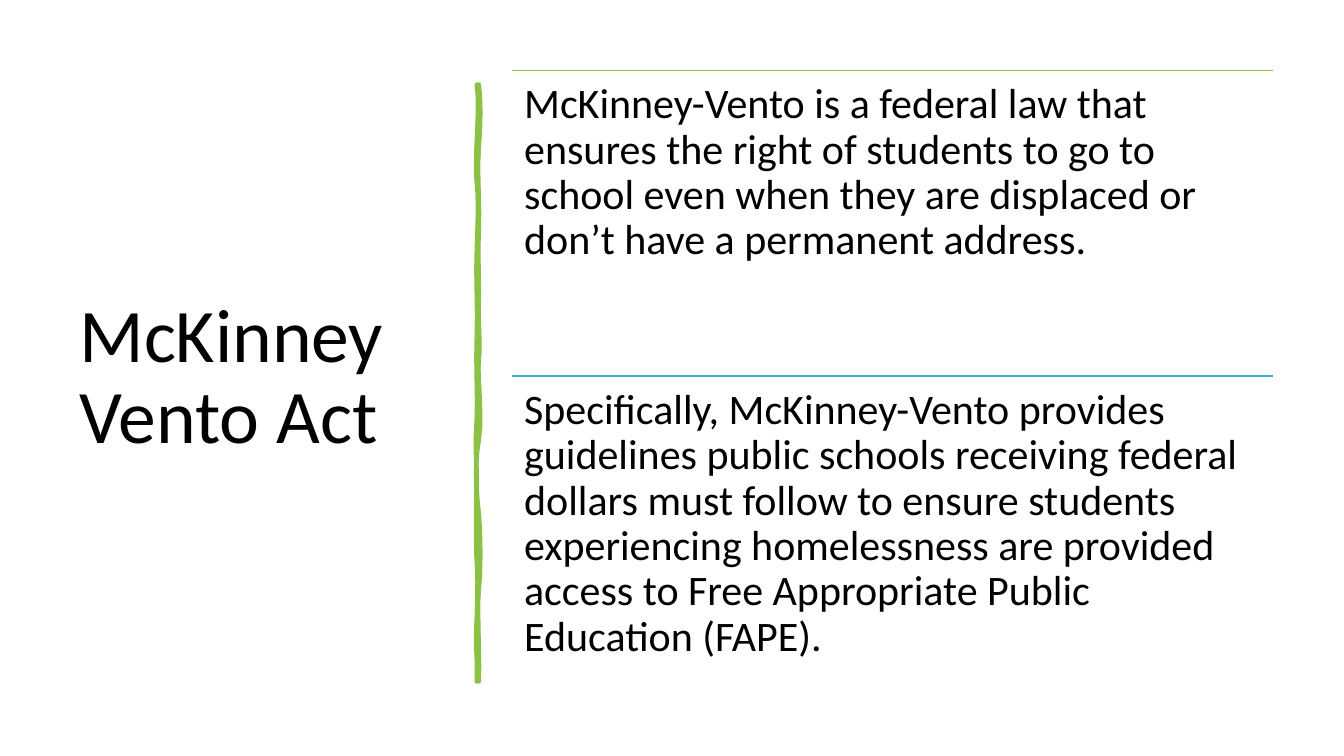
from dataclasses import dataclass

from lxml import etree
from pptx import Presentation
from pptx.dml.color import RGBColor
from pptx.enum.shapes import MSO_CONNECTOR
from pptx.enum.text import MSO_ANCHOR
from pptx.oxml.ns import qn
from pptx.slide import Slide
from pptx.util import Inches, Pt

STRAIGHT = MSO_CONNECTOR.STRAIGHT
TOP, MIDDLE = MSO_ANCHOR.TOP, MSO_ANCHOR.MIDDLE
WIDE, HIGH = Inches(13.333), Inches(7.5)
FONT, BLACK, GREEN, BLUE = "Calibri", "000000", "8BC145", "36AFCE"
LEFT, SPAN = 5.08 / 13.333, 7.55 / 13.333
FIRST, ROW = 0.7 / 7.5, 3.03 / 7.5
STEPS = 6

Point = tuple[float, float]

START: Point = (4.75, 0.84)
CURVES: list[tuple[Point, Point, Point]] = [
    ((4.77, 1.02), (4.77, 1.19), (4.75, 1.46)),
    ((4.73, 1.73), (4.76, 1.95), (4.75, 2.26)),
    ((4.74, 2.57), (4.75, 2.62), (4.75, 2.94)),
    ((4.74, 3.25), (4.77, 3.42), (4.75, 3.56)),
    ((4.73, 3.7), (4.79, 4.14), (4.75, 4.36)),
    ((4.71, 4.57), (4.72, 4.84), (4.75, 5.1)),
    ((4.77, 5.36), (4.77, 5.64), (4.75, 5.84)),
    ((4.73, 6.03), (4.76, 6.5), (4.75, 6.76)),
    ((4.74, 6.76), (4.73, 6.76), (4.73, 6.76)),
    ((4.74, 6.46), (4.71, 6.44), (4.73, 6.13)),
    ((4.74, 5.83), (4.74, 5.7), (4.73, 5.57)),
    ((4.72, 5.44), (4.72, 4.95), (4.73, 4.77)),
    ((4.73, 4.59), (4.71, 4.45), (4.73, 4.15)),
    ((4.74, 3.86), (4.72, 3.73), (4.73, 3.35)),
    ((4.74, 2.98), (4.72, 2.81), (4.73, 2.5)),
    ((4.74, 2.18), (4.75, 2), (4.73, 1.81)),
    ((4.7, 1.63), (4.77, 1.04), (4.73, 0.84)),
]


@dataclass
class Label:
    text: str
    left: float
    top: float
    width: float
    height: float
    size: int
    inset: Point
    anchor: MSO_ANCHOR


@dataclass
class Block:
    text: str
    tint: str


BLOCKS = [
    Block(
        "McKinney-Vento is a federal law that ensures the right of students "
        "to go to school even when they are displaced or don’t have a "
        "permanent address.",
        GREEN,
    ),
    Block(
        "Specifically, McKinney-Vento provides guidelines public schools "
        "receiving federal dollars must follow to ensure students "
        "experiencing homelessness are provided access to Free Appropriate "
        "Public Education (FAPE).",
        BLUE,
    ),
]
TITLE = Label(
    "McKinney Vento Act", 0.69 / 13.333, FIRST, 3.74 / 13.333, 6.11 / 7.5,
    54, (0.1, 0.05), MIDDLE,
)


def color(code: str) -> RGBColor:
    return RGBColor.from_string(code)


def across(share: float) -> int:
    return round(WIDE * share)


def down(share: float) -> int:
    return round(HIGH * share)


def write(slide: Slide, label: Label) -> None:
    box = slide.shapes.add_textbox(
        across(label.left), down(label.top),
        across(label.width), down(label.height),
    )
    frame = box.text_frame
    frame.word_wrap = True
    frame.vertical_anchor = label.anchor
    side, edge = label.inset
    frame.margin_left = frame.margin_right = Inches(side)
    frame.margin_top = frame.margin_bottom = Inches(edge)
    para = frame.paragraphs[0]
    para.line_spacing = 0.9
    run = para.add_run()
    run.text = label.text
    run.font.name = FONT
    run.font.size = Pt(label.size)
    run.font.color.rgb = color(BLACK)


def rule(slide: Slide, top: float, tint: str) -> None:
    line = slide.shapes.add_connector(
        STRAIGHT, across(LEFT), down(top), across(LEFT + SPAN), down(top)
    )
    line.line.color.rgb = color(tint)
    line.line.width = Pt(1)
    etree.SubElement(line._element.spPr, qn("a:effectLst"))


def blend(a: float, b: float, c: float, d: float, t: float) -> int:
    u = 1 - t
    return Inches(
        u**3 * a + 3 * u * u * t * b + 3 * u * t * t * c + t**3 * d
    )


def trace() -> list[tuple[int, int]]:
    points = []
    last = START
    for one, two, end in CURVES:
        for step in range(1, STEPS + 1):
            x, y = (
                blend(*axis, step / STEPS)
                for axis in zip(last, one, two, end)
            )
            points.append((x, y))
        last = end
    return points


def stroke(slide: Slide) -> None:
    x, y = START
    pen = slide.shapes.build_freeform(Inches(x), Inches(y))
    pen.add_line_segments(trace(), close=True)
    shape = pen.convert_to_shape()
    shape.shadow.inherit = False
    shape.fill.solid()
    shape.fill.fore_color.rgb = color(GREEN)
    shape.line.color.rgb = color(GREEN)
    shape.line.width = Pt(3.25)
    etree.SubElement(shape.line._ln, qn("a:round"))


def main() -> None:
    deck = Presentation()
    deck.slide_width, deck.slide_height = WIDE, HIGH
    slide = deck.slides.add_slide(deck.slide_layouts[6])
    write(slide, TITLE)
    stroke(slide)
    for index, block in enumerate(BLOCKS):
        top = FIRST + index * ROW
        rule(slide, top, block.tint)
        write(slide, Label(
            block.text, LEFT, top, SPAN, ROW, 30, (0.12, 0.12), TOP
        ))
    deck.save("out.pptx")


if __name__ == "__main__":
    main()
